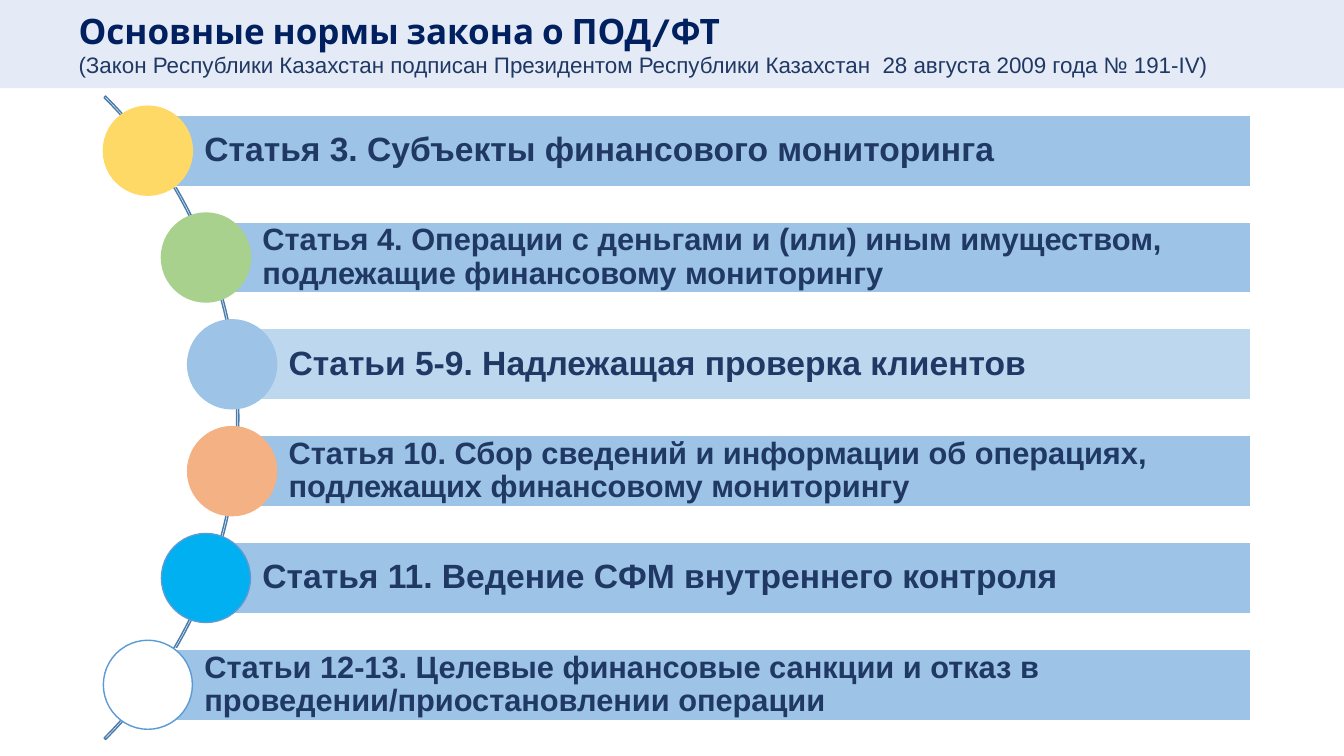
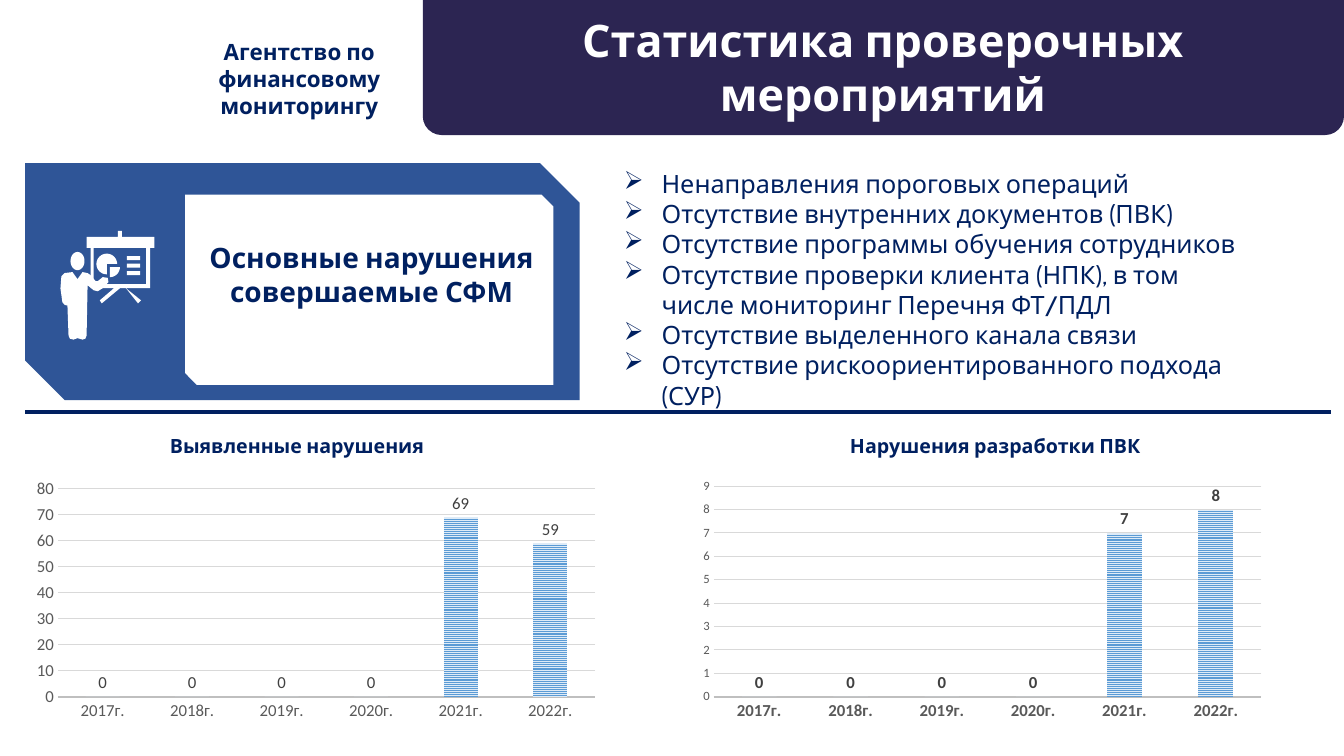
from math import cos, pi, sin, sqrt

from lxml.etree import SubElement
from pptx import Presentation
from pptx.chart.data import CategoryChartData
from pptx.dml.color import RGBColor
from pptx.enum.chart import XL_CHART_TYPE as ChartType, XL_LABEL_POSITION as LabelPos, XL_TICK_MARK as Tick
from pptx.enum.dml import MSO_PATTERN as Pattern
from pptx.enum.shapes import MSO_CONNECTOR as Connector, MSO_SHAPE as Preset, MSO_SHAPE_TYPE as Kind
from pptx.enum.text import MSO_ANCHOR as Anchor, PP_ALIGN as Align
from pptx.oxml.ns import qn
from pptx.util import Pt

NAVY, INK, WHITE = "002060", "203864", "FFFFFF"
SKY, BLUE, GREY = "9DC3E6", "5B9BD5", "595959"
HEADING = {"name": "Cabin", "bold": True}
rgb = RGBColor.from_string


def paint(fill, colour):
    """Fill an area, line or font with a hex colour; None leaves it empty."""
    if colour is None:
        fill.background()
    else:
        fill.solid()
        fill.fore_color.rgb = rgb(colour)


def write(frame, lines, colour, align=Align.LEFT, **font):
    """Put each line in its own paragraph, all in the same font."""
    frame.word_wrap = True
    for number, line in enumerate(lines):
        paragraph = frame.add_paragraph() if number else frame.paragraphs[0]
        paragraph.alignment = align
        run = paragraph.add_run()
        run.text = line
        for key, value in font.items():
            setattr(run.font, key, value)
        paint(run.font.fill, colour)


deck = Presentation()
deck.slide_width, deck.slide_height = Pt(960), Pt(540)
law, checks = [deck.slides.add_slide(deck.slide_layouts[6]) for _ in range(2)]

# Slide 1: main articles of the law
band = law.shapes.add_shape(Preset.RECTANGLE, 0, 0, Pt(960), Pt(63))
paint(band.fill, "DAE3F3")
paint(band.line.fill, None)
tint = band.fill._xPr.find(qn("a:solidFill"))[0]
SubElement(tint, qn("a:alpha"), val="70000")

title = law.shapes.add_textbox(Pt(49), Pt(3), Pt(851), Pt(57)).text_frame
write(title, [
    "Основные нормы закона о ПОД/ФТ",
    "(Закон Республики Казахстан подписан Президентом Республики Казахстан  28 августа 2009 года № 191-IV)",
], NAVY, size=Pt(25), **HEADING)
subtitle = title.paragraphs[1].runs[0].font
for key, value in {"name": "Arial", "size": Pt(16), "bold": False}.items():
    setattr(subtitle, key, value)
paint(subtitle.fill, INK)

arc_x, arc_y, arc_radius = -154.4, 298.4, 325
arc = law.shapes.add_shape(Preset.BLOCK_ARC, Pt(arc_x - arc_radius), Pt(arc_y - arc_radius),
                           Pt(2 * arc_radius), Pt(2 * arc_radius))
for index, value in enumerate((189, 27, 0.0024)):
    arc.adjustments[index] = value
paint(arc.fill, None)
paint(arc.line.fill, "497CAB")
arc.line.width = Pt(1)

articles = [
    ("Статья 3. Субъекты финансового мониторинга", 24, SKY, "FFD966", "FFD966"),
    ("Статья 4. Операции с деньгами и (или) иным имуществом, подлежащие финансовому мониторингу",
     22, SKY, "A9D18E", "A9D18E"),
    ("Статьи 5-9. Надлежащая проверка клиентов", 24, "BDD7EE", SKY, SKY),
    ("Статья 10. Сбор сведений и информации об операциях, подлежащих финансовому мониторингу",
     22, SKY, "F4B183", "F4B183"),
    ("Статья 11. Ведение СФМ внутреннего контроля", 24, SKY, "00B0F0", BLUE),
    ("Статьи 12-13. Целевые финансовые санкции и отказ в проведении/приостановлении операции",
     22, SKY, WHITE, BLUE),
]
row_step, bar_height, bar_right, dot = 76.3, 51, 893.2, 63.6
for row, (article, size, bar_colour, dot_colour, dot_edge) in enumerate(articles):
    rise = (row - (len(articles) - 1) / 2) * row_step
    centre_y = arc_y + rise
    centre_x = arc_x + sqrt((arc_radius - 2.5) ** 2 - rise ** 2)
    bar = law.shapes.add_shape(Preset.RECTANGLE, Pt(centre_x), Pt(centre_y - bar_height / 2),
                               Pt(bar_right - centre_x), Pt(bar_height))
    marker = law.shapes.add_shape(Preset.OVAL, Pt(centre_x - dot / 2), Pt(centre_y - dot / 2), Pt(dot), Pt(dot))
    for part, colour, edge in ((bar, bar_colour, WHITE), (marker, dot_colour, dot_edge)):
        paint(part.fill, colour)
        paint(part.line.fill, edge)
        part.line.width = Pt(1)
    write(bar.text_frame, [article], INK, name="Arial", size=Pt(size), bold=True)
    layout = {"margin_left": Pt(40.4), "margin_right": Pt(4.5), "margin_top": Pt(4.5),
              "margin_bottom": Pt(4.5), "vertical_anchor": Anchor.MIDDLE}
    for key, value in layout.items():
        setattr(bar.text_frame, key, value)
    bar.text_frame.paragraphs[0].line_spacing = 0.9

# Slide 2: inspection statistics
panels = [
    (Preset.ROUND_2_SAME_RECTANGLE, (302, 0, 658, 96.5), (0, 0.14), "2C2552"),
    (Preset.SNIP_2_DIAG_RECTANGLE, (18, 116.6, 396, 169.2), (0, 0.1667), "2F5597"),
    (Preset.SNIP_2_DIAG_RECTANGLE, (132.3, 139, 263, 136), (0, 0.062), WHITE),
]
for preset, box, corners, colour in panels:
    panel = checks.shapes.add_shape(preset, *map(Pt, box))
    for index, value in enumerate(corners):
        panel.adjustments[index] = value
    paint(panel.fill, colour)
    paint(panel.line.fill, None)

easel = [(87.1, 169.2), (87.1, 164.9), (84.2, 164.9), (84.2, 169.2), (61.9, 169.2), (61.9, 177.1),
         (64.8, 177.1), (64.8, 205.9), (81.4, 205.9), (71.3, 214.6), (72.7, 216.7), (85.7, 205.9),
         (90, 205.9), (98.6, 216.7), (100.8, 214.6), (90, 205.9), (107.3, 205.9), (107.3, 177.1),
         (110.2, 177.1), (110.2, 169.2)]
board = [(67, 177.1), (104.4, 177.1), (104.4, 203), (67, 203)]
pie = [(76.3, 188.6)] + [(76.3 + 7.4 * cos(pi * n / 16), 188.6 + 7.4 * sin(pi * n / 16)) for n in range(8, 33)]
wedge = [(78.5, 190.8)] + [(78.5 + 7.2 * cos(pi * n / 16), 190.8 + 7.2 * sin(pi * n / 16)) for n in range(9)]
notes = [[(90.7, y), (100.1, y), (100.1, y + 2.9), (90.7, y + 2.9)] for y in (182.9, 188.3, 193.7)]
head = [(55.4 + 5 * cos(pi * n / 16), 186.5 + 6.5 * sin(pi * n / 16)) for n in range(32)]
body = [(61.9, 239.8), (61, 242), (59, 242.6), (55.4, 241.6), (52.6, 242.6), (50, 242), (49, 239.8),
        (48.2, 218.2), (46.5, 218), (44.6, 216), (43.2, 206), (43.9, 197.3), (46.1, 195.1), (51.8, 194.4),
        (55.4, 199.4), (59, 194.4), (62.6, 195.1), (64.8, 196.6), (68.4, 200.9), (69.8, 200.9),
        (73.4, 198), (77, 198.5), (77.5, 201.5), (73.4, 205.9), (69.8, 208.1), (67, 207.4), (62.6, 203.8)]
for contours in ([easel, board, pie, wedge, *notes], [body, head]):
    outlines = [[(Pt(x), Pt(y)) for x, y in contour] for contour in contours]
    builder = checks.shapes.build_freeform(*outlines[0][0])
    for number, outline in enumerate(outlines):
        if number:
            builder.move_to(*outline[0])
        builder.add_line_segments(outline[1:], close=True)
    presenter = builder.convert_to_shape()
    paint(presenter.fill, WHITE)
    paint(presenter.line.fill, None)

divider = checks.shapes.add_connector(Connector.STRAIGHT, Pt(18), Pt(294.5), Pt(950.4), Pt(294.5))
paint(divider.line.fill, NAVY)
divider.line.width = Pt(3)
SubElement(divider._element.spPr, qn("a:effectLst"))

headings = [
    ("Статистика проверочных мероприятий", (347, 5.8, 567.4, 85), 32, WHITE),
    ("Агентство по финансовому мониторингу", (141.8, 23.8, 144, 65.5), 16, NAVY),
    ("Основные нарушения совершаемые СФМ", (135.4, 168.5, 260, 55.4), 20, NAVY),
    ("Выявленные нарушения", (92.9, 306.7, 238.3, 24.5), 14, NAVY),
    ("Нарушения разработки ПВК", (555.8, 306.7, 310.3, 24.5), 14, NAVY),
]
for heading, box, size, colour in headings:
    frame = checks.shapes.add_textbox(*map(Pt, box)).text_frame
    write(frame, [heading], colour, Align.CENTER, size=Pt(size), **HEADING)

violations = checks.shapes.add_textbox(Pt(438.5), Pt(116.6), Pt(466.6), Pt(160)).text_frame
write(violations, [
    "Ненаправления пороговых операций",
    "Отсутствие внутренних документов (ПВК)",
    "Отсутствие программы обучения сотрудников",
    "Отсутствие проверки клиента (НПК), в том числе мониторинг Перечня ФТ/ПДЛ",
    "Отсутствие выделенного канала связи",
    "Отсутствие рискоориентированного подхода (СУР)",
], NAVY, name="Cabin", size=Pt(18))
for paragraph in violations.paragraphs:
    properties = paragraph._p.get_or_add_pPr()
    properties.set("marL", str(Pt(27)))
    properties.set("indent", str(-Pt(27)))
    SubElement(properties, qn("a:buChar"), char="➢")

# left, values, axis maximum, axis step, value axis size, bold captions
statistics = [
    (18, (0, 0, 0, 0, 69, 59), 80, 10, 12, False),
    (494, (0, 0, 0, 0, 7, 8), 9, 1, 9, True),
]
for left, counts, top, step, scale_size, bold in statistics:
    data = CategoryChartData()
    data.categories = [f"{year}г." for year in range(2017, 2023)]
    data.add_series("Нарушения", counts)
    chart = checks.shapes.add_chart(ChartType.COLUMN_CLUSTERED, Pt(left), Pt(338.4), Pt(415.4), Pt(180), data).chart
    chart.has_legend = chart.has_title = False

    plot = chart.plots[0]
    for key, value in {"gap_width": 164, "overlap": -22, "vary_by_categories": False,
                       "has_data_labels": True}.items():
        setattr(plot, key, value)
    columns = plot.series[0].format.fill
    columns.patterned()
    columns.pattern = Pattern.NARROW_HORIZONTAL
    columns.fore_color.rgb, columns.back_color.rgb = rgb(BLUE), rgb("DEEBF7")
    labels = plot.data_labels
    labels.show_value, labels.position = True, LabelPos.OUTSIDE_END

    years, scale = chart.category_axis, chart.value_axis
    for key, value in {"minimum_scale": 0, "maximum_scale": top, "major_unit": step,
                       "has_major_gridlines": True}.items():
        setattr(scale, key, value)
    years.major_tick_mark = scale.major_tick_mark = Tick.NONE
    for line, colour, width in ((years.format.line, "BFBFBF", 1.5),
                                (scale.major_gridlines.format.line, "D9D9D9", 0.75)):
        paint(line.fill, colour)
        line.width = Pt(width)
    paint(scale.format.line.fill, None)
    for font, size, colour, weight in ((chart.font, 10, "000000", False),
                                       (labels.font, 12, "404040", bold),
                                       (years.tick_labels.font, 12, GREY, bold),
                                       (scale.tick_labels.font, scale_size, GREY, False)):
        for key, value in {"name": "Calibri", "size": Pt(size), "bold": weight}.items():
            setattr(font, key, value)
        paint(font.fill, colour)

for slide in (law, checks):
    for shape in slide.shapes:
        if shape.shape_type in (Kind.AUTO_SHAPE, Kind.FREEFORM):
            shape.shadow.inherit = False

deck.save("out.pptx")
